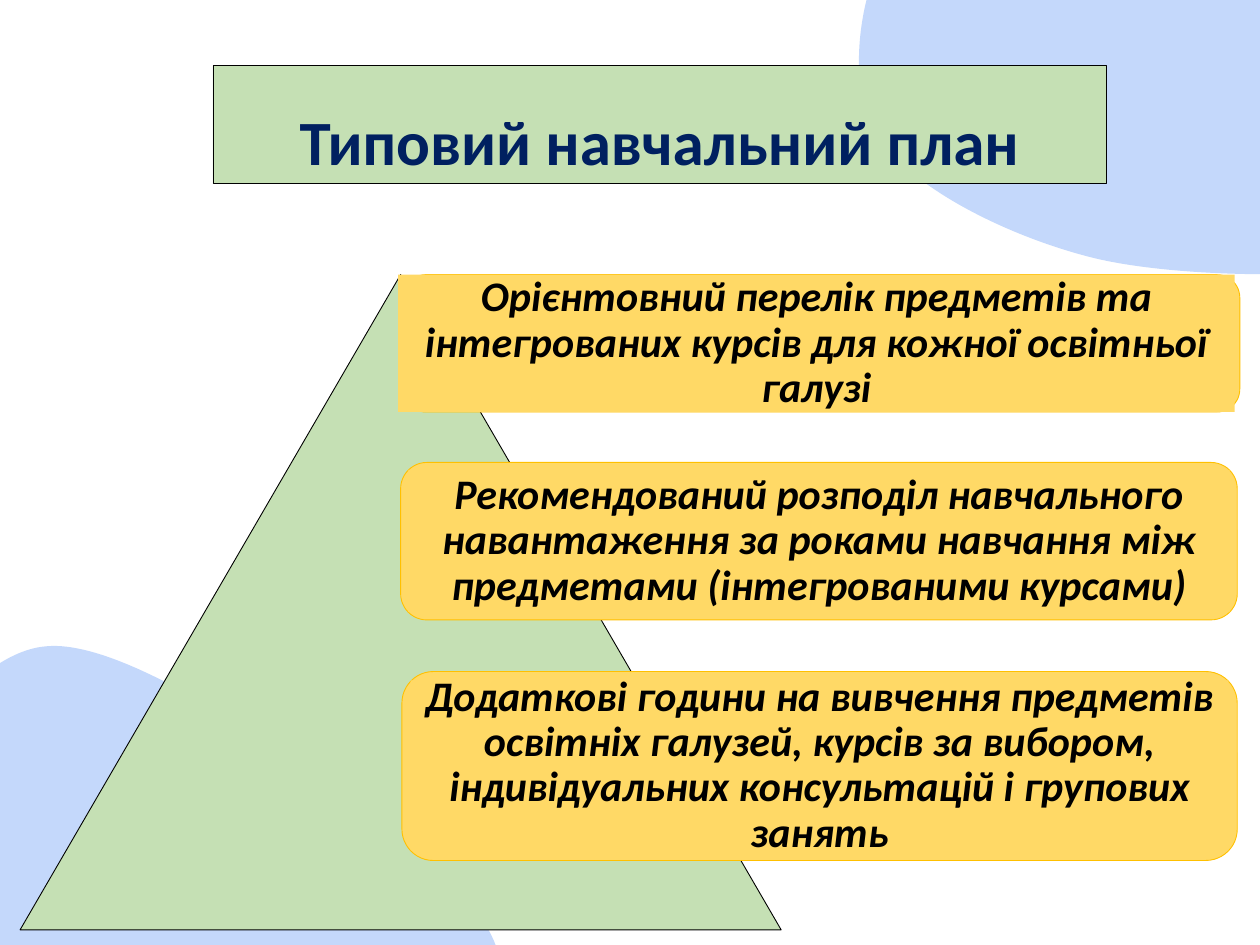
import math

import pptx
import pptx.dml.color
import pptx.enum.shapes
import pptx.enum.text
import pptx.oxml
import pptx.oxml.ns
import pptx.util

Inches = pptx.util.Inches
Pt = pptx.util.Pt
Shapes = pptx.enum.shapes.MSO_SHAPE
Anchor = pptx.enum.text.MSO_ANCHOR
GREEN, YELLOW, GOLD, BLUE = "C5E0B4", "FFD966", "FFC000", "C4D8FB"
BLACK, NAVY = "000000", "002060"
BLOB_ANGLE = 48.6

TOP_BLOB = [
    (7.34, -0.71),
    (7.81, -0.91), (9.12, -0.57), (9.73, -0.24),
    (10.34, 0.09), (10.79, 0.9), (11.02, 1.29),
    (11.25, 1.68), (11.51, 1.96), (11.11, 2.08),
    (10.72, 2.21), (9.35, 2.22), (8.65, 2.04),
    (7.95, 1.86), (7.12, 1.44), (6.91, 0.98),
    (6.69, 0.53), (6.87, -0.5), (7.34, -0.71),
]
BOTTOM_BLOB = [
    (0.36, 5.13),
    (1.02, 5.06), (2.39, 6.07), (3, 6.5),
    (3.6, 6.93), (3.97, 7.38), (3.97, 7.68),
    (3.98, 7.97), (3.57, 8.23), (3.03, 8.27),
    (2.5, 8.31), (1.44, 8.17), (0.77, 7.94),
    (0.1, 7.71), (-0.9, 7.35), (-0.97, 6.88),
    (-1.04, 6.41), (-0.31, 5.19), (0.36, 5.13),
]
CARDS = [
    ((3.2, 2.18, 6.64, 1.09), (3.16, 2.18, 6.64, 1.09),
     "Орієнтовний перелік предметів та інтегрованих курсів для кожної освітньої галузі"),
    ((3.18, 3.67, 6.64, 1.25), (3.24, 3.73, 6.52, 1.13),
     "Рекомендований розподіл навчального навантаження за роками навчання між "
     "предметами (інтегрованими курсами)"),
    ((3.19, 5.33, 6.63, 1.5), (3.26, 5.4, 6.49, 1.35),
     "Додаткові години на вивчення предметів освітніх галузей, курсів за вибором, "
     "індивідуальних консультацій і групових занять"),
]


def color(value):
    """Return the colour of a hex string."""
    return pptx.dml.color.RGBColor.from_string(value)


def paint(shape, fill, line=None):
    """Give a shape a solid fill and a thin outline or none."""
    shape.fill.solid()
    shape.fill.fore_color.rgb = color(fill)
    if line:
        shape.line.color.rgb = color(line)
        shape.line.width = Pt(0.5)
    else:
        shape.line.fill.background()


def add_shape(shapes, kind, box, fill, line=None):
    """Add a painted preset shape in a box."""
    shape = shapes.add_shape(kind, *map(Inches, box))
    shape.shadow.inherit = False
    paint(shape, fill, line)
    return shape


def write(shape, text, size, ink, spacing, anchor, inset, italic=False):
    """Write one centred bold paragraph in a shape."""
    frame = shape.text_frame
    frame.text = text
    frame.word_wrap = True
    frame.auto_size = pptx.enum.text.MSO_AUTO_SIZE.NONE
    frame.vertical_anchor = anchor
    frame.margin_left = frame.margin_right = Inches(0.1)
    frame.margin_top = frame.margin_bottom = Inches(inset)
    para = frame.paragraphs[0]
    para.alignment = pptx.enum.text.PP_ALIGN.CENTER
    para.line_spacing = spacing
    font = para.runs[0].font
    font.name, font.size = "Calibri", Pt(size)
    font.bold, font.italic = True, italic
    font.color.rgb = color(ink)


def turn(point, degrees):
    """Turn a point clockwise about the slide's corner."""
    x, y = point
    cosine, sine = math.cos(math.radians(degrees)), math.sin(math.radians(degrees))
    return x * cosine - y * sine, x * sine + y * cosine


def bend(shape):
    """Join every three line segments of a freeform into one cubic curve."""
    qualify = pptx.oxml.ns.qn
    lines = list(shape.element.iter(qualify("a:lnTo")))
    for first in range(0, len(lines), 3):
        curve = pptx.oxml.parse_xml(
            f'<a:cubicBezTo {pptx.oxml.ns.nsdecls("a")}/>')
        lines[first].addprevious(curve)
        for line in lines[first:first + 3]:
            curve.append(line[0])
            line.getparent().remove(line)


def add_blob(page, master, number, points):
    """Draw a turned background blob on the slide master."""
    level = [tuple(map(Inches, turn(point, -BLOB_ANGLE))) for point in points]
    builder = page.shapes.build_freeform(*level[0])
    builder.add_line_segments(level[1:], close=True)
    blob = builder.convert_to_shape()
    bend(blob)
    blob.shadow.inherit = False
    paint(blob, BLUE)
    middle = blob.left + blob.width / 2, blob.top + blob.height / 2
    center_x, center_y = turn(middle, BLOB_ANGLE)
    blob.left = round(center_x - blob.width / 2)
    blob.top = round(center_y - blob.height / 2)
    blob.rotation = BLOB_ANGLE
    blob.element.nvSpPr.cNvPr.set("id", str(number))
    master.placeholders[0].element.addprevious(blob.element)


def place_title(page, box, text):
    """Move and format the title placeholder."""
    title = page.shapes.title
    title.left, title.top, title.width, title.height = map(Inches, box)
    paint(title, GREEN, BLACK)
    write(title, text, 36, NAVY, Pt(58), Anchor.BOTTOM, 0.05)


def add_card(page, frame_box, label_box, text):
    """Add a rounded card with its label as a group."""
    shapes = page.shapes.add_group_shape().shapes
    add_shape(shapes, Shapes.ROUNDED_RECTANGLE, frame_box, YELLOW, GOLD)
    label = add_shape(shapes, Shapes.RECTANGLE, label_box, YELLOW)
    write(label, text, 24, BLACK, 0.9, Anchor.MIDDLE, 0.1, italic=True)


def main():
    """Build the slide and save the deck."""
    deck = pptx.Presentation()
    deck.slide_width, deck.slide_height = Inches(10), Inches(7.5)
    page = deck.slides.add_slide(deck.slide_layouts[5])
    for number, points in enumerate((TOP_BLOB, BOTTOM_BLOB), start=101):
        add_blob(page, deck.slide_master, number, points)
    place_title(page, (1.69, 0.52, 7.09, 0.94), "Типовий навчальний план")
    add_shape(page.shapes, Shapes.ISOSCELES_TRIANGLE, (0.16, 2.18, 6.04, 5.2), GREEN, BLACK)
    for card in CARDS:
        add_card(page, *card)
    deck.save("out.pptx")


if __name__ == "__main__":
    main()
